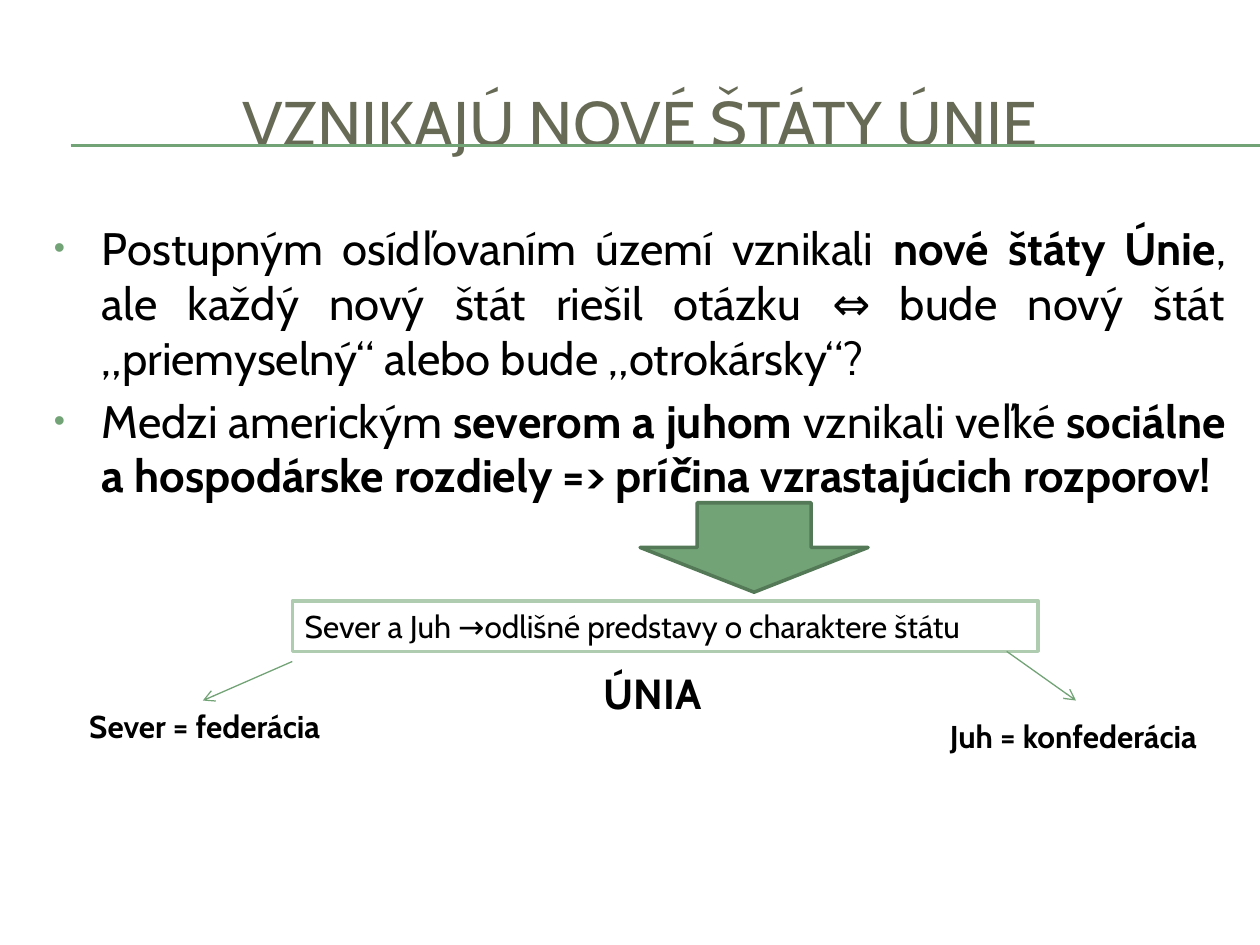
"""Build a slide on the new states of the Union and the North-South divide."""

from dataclasses import dataclass

import lxml.etree
import pptx
import pptx.dml.color
import pptx.enum.shapes
import pptx.enum.text
import pptx.oxml.ns
import pptx.util

Inches = pptx.util.Inches
Pt = pptx.util.Pt
Color = pptx.dml.color.RGBColor
Align = pptx.enum.text.PP_ALIGN
Anchor = pptx.enum.text.MSO_ANCHOR
Shape = pptx.enum.shapes.MSO_SHAPE


@dataclass(frozen=True)
class Theme:
    font: str = "Cabin"
    title: Color = Color.from_string("676A55")
    text: Color = Color.from_string("000000")
    paper: Color = Color.from_string("FFFFFF")
    accent: Color = Color.from_string("72A376")
    accent_dark: Color = Color.from_string("547957")
    accent_light: Color = Color.from_string("B0CCB0")
    title_size: float = 36
    body_size: float = 26
    union_size: float = 24
    label_size: float = 18
    rule_width: float = 0.75
    outline_width: float = 2


@dataclass(frozen=True)
class Area:
    left: float
    top: float
    width: float
    height: float

    def lengths(self) -> list:
        return [Inches(v) for v in (self.left, self.top, self.width, self.height)]


@dataclass(frozen=True)
class Line:
    start: tuple[float, float]
    end: tuple[float, float]
    arrow: bool = False


@dataclass(frozen=True)
class Label:
    text: str
    area: Area
    size: float


@dataclass(frozen=True)
class Phrase:
    text: str
    bold: bool = False


THEME = Theme()
TITLE = "VZNIKAJÚ NOVÉ ŠTÁTY ÚNIE"
TITLE_AREA = Area(0.33, 0.5, 9.5, 0.92)
BODY_AREA = Area(0.33, 1.7, 9.5, 4.95)
BULLETS = [
    [
        Phrase("Postupným osídľovaním území vznikali "),
        Phrase("nové štáty Únie", True),
        Phrase(", ale každý nový štát riešil otázku ⇔ bude nový štát "
               "„priemyselný“ alebo bude „otrokársky“? "),
    ],
    [
        Phrase("Medzi americkým "),
        Phrase("severom a juhom ", True),
        Phrase("vznikali veľké "),
        Phrase("sociálne a hospodárske rozdiely => príčina vzrastajúcich rozporov!", True),
    ],
]
RULES = [Line((0.56, y), (10, y)) for y in (1.15, 1.16)]
ARROWS = [
    Line((2.32, 5.25), (1.61, 5.56), True),
    Line((7.99, 5.17), (8.54, 5.56), True),
]
DOWN_ARROW_AREA = Area(5.08, 3.99, 1.81, 0.71)
IDEA = Label("Sever a Juh →odlišné predstavy o charaktere štátu",
             Area(2.32, 4.77, 5.92, 0.4), THEME.label_size)
LABELS = [
    Label("Sever = federácia", Area(0.61, 5.56, 2.35, 0.4), THEME.label_size),
    Label("Juh = konfederácia", Area(7.44, 5.64, 2.49, 0.4), THEME.label_size),
    Label("ÚNIA", Area(4.69, 5.25, 0.98, 0.5), THEME.union_size),
]


def add_element(parent, tag: str, **attributes: str):
    """Append a DrawingML element to a parent."""
    return lxml.etree.SubElement(parent, pptx.oxml.ns.qn(tag), attributes)


def style_span(span, size: float, color: Color = THEME.text, bold: bool = False) -> None:
    """Set the type of one run."""
    span.font.name = THEME.font
    span.font.size = Pt(size)
    span.font.bold = bold
    span.font.color.rgb = color


def draw_title(page) -> None:
    """Place and format the title placeholder."""
    box = page.shapes.title
    box.left, box.top, box.width, box.height = TITLE_AREA.lengths()
    box.text_frame.text = TITLE
    box.text_frame.vertical_anchor = Anchor.MIDDLE
    para = box.text_frame.paragraphs[0]
    para.alignment = Align.CENTER
    style_span(para.runs[0], THEME.title_size, THEME.title)


def add_bullet(para) -> None:
    """Give a paragraph a hanging coloured bullet."""
    properties = para._p.get_or_add_pPr()
    properties.set("marL", str(Inches(0.38)))
    properties.set("indent", str(-Inches(0.38)))
    color = add_element(properties, "a:buClr")
    add_element(color, "a:srgbClr", val=str(THEME.accent))
    add_element(properties, "a:buSzPct", val="70000")
    add_element(properties, "a:buFont", typeface="Arial")
    add_element(properties, "a:buChar", char="•")


def draw_body(page) -> None:
    """Write the justified bullet paragraphs."""
    frame = page.shapes.add_textbox(*BODY_AREA.lengths()).text_frame
    frame.word_wrap = True
    for index, phrases in enumerate(BULLETS):
        para = frame.add_paragraph() if index else frame.paragraphs[0]
        para.alignment = Align.JUSTIFY
        para.space_before = Pt(5)
        add_bullet(para)
        for phrase in phrases:
            span = para.add_run()
            span.text = phrase.text
            style_span(span, THEME.body_size, bold=phrase.bold)


def draw_line(page, line: Line) -> None:
    """Draw a straight rule or arrow."""
    points = [Inches(v) for v in (*line.start, *line.end)]
    connector = page.shapes.add_connector(pptx.enum.shapes.MSO_CONNECTOR.STRAIGHT, *points)
    connector.line.color.rgb = THEME.accent
    connector.line.width = Pt(THEME.rule_width)
    if line.arrow:
        add_element(connector.line._get_or_add_ln(), "a:tailEnd", type="arrow")
    add_element(connector._element.spPr, "a:effectLst")


def draw_shape(page, kind: Shape, area: Area, fill: Color, outline: Color):
    """Draw a filled and outlined preset shape."""
    shape = page.shapes.add_shape(kind, *area.lengths())
    shape.shadow.inherit = False
    shape.fill.solid()
    shape.fill.fore_color.rgb = fill
    shape.line.color.rgb = outline
    shape.line.width = Pt(THEME.outline_width)
    return shape


def write_label(box, label: Label, bold: bool) -> None:
    """Write one unwrapped line in a box."""
    frame = box.text_frame
    frame.text = label.text
    frame.word_wrap = False
    frame.vertical_anchor = Anchor.TOP
    para = frame.paragraphs[0]
    para.alignment = Align.LEFT
    style_span(para.runs[0], label.size, bold=bold)


def main() -> None:
    """Build and save the deck."""
    deck = pptx.Presentation()
    deck.slide_width, deck.slide_height = Inches(10), Inches(7.5)
    page = deck.slides.add_slide(deck.slide_layouts.get_by_name("Title Only"))
    page.background.fill.solid()
    page.background.fill.fore_color.rgb = THEME.paper
    for rule in RULES:
        draw_line(page, rule)
    draw_title(page)
    draw_body(page)
    draw_shape(page, Shape.DOWN_ARROW, DOWN_ARROW_AREA, THEME.accent, THEME.accent_dark)
    idea = draw_shape(page, Shape.RECTANGLE, IDEA.area, THEME.paper, THEME.accent_light)
    write_label(idea, IDEA, bold=False)
    for arrow in ARROWS:
        draw_line(page, arrow)
    for label in LABELS:
        write_label(page.shapes.add_textbox(*label.area.lengths()), label, bold=True)
    deck.save("out.pptx")


if __name__ == "__main__":
    main()
